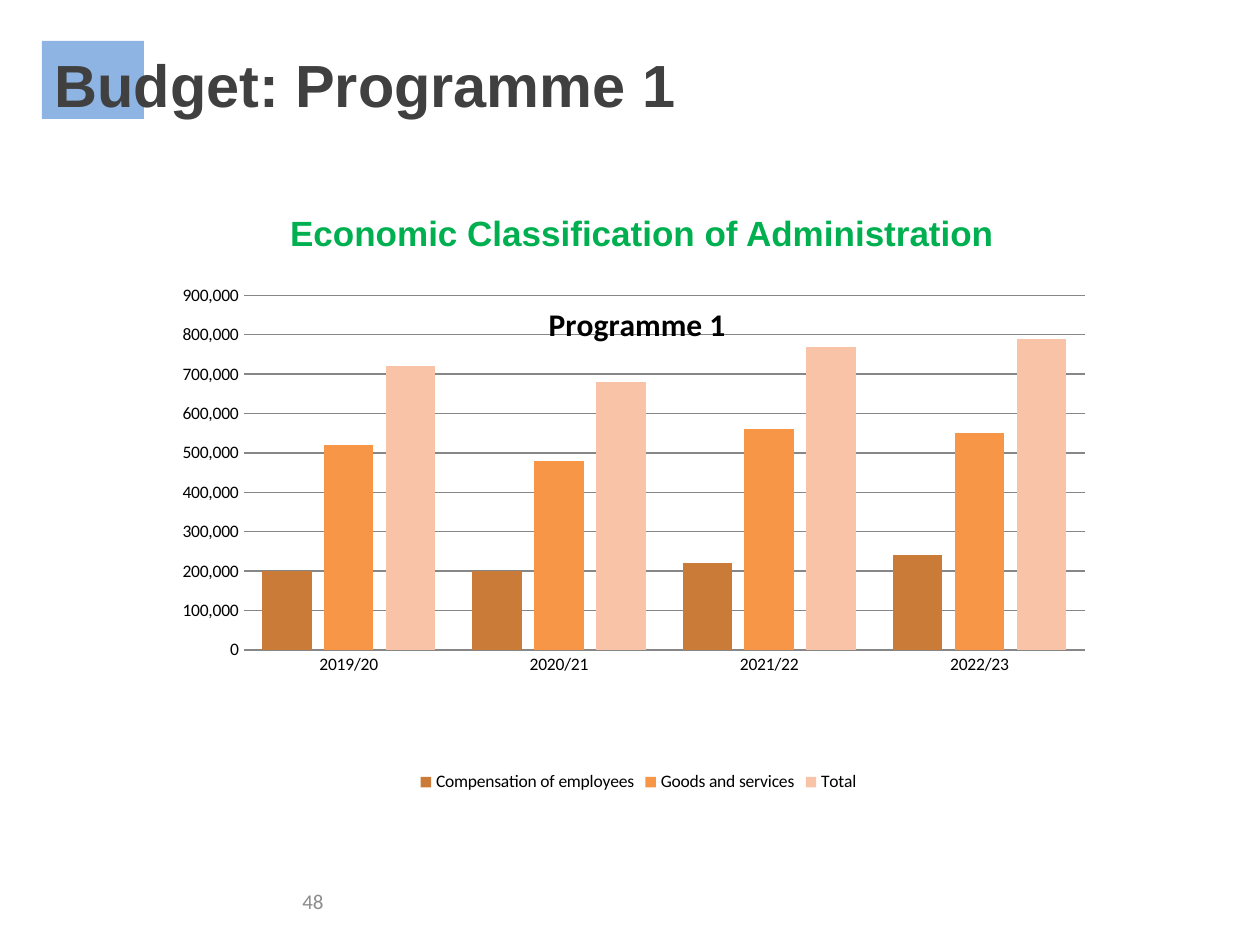
import pptx
import pptx.chart.data
import pptx.dml.color
import pptx.enum.chart
import pptx.enum.shapes
import pptx.enum.text
import pptx.oxml
import pptx.oxml.ns
import pptx.util

PX = pptx.util.Inches(1) / 126
ALIGN = pptx.enum.text.PP_ALIGN
ANCHOR = pptx.enum.text.MSO_ANCHOR

YEARS = ["2019/20", "2020/21", "2021/22", "2022/23"]
SPENDING = [
    ("Compensation of employees", "CB7B38", [200000, 200000, 220000, 240000]),
    ("Goods and services", "F79646", [520000, 480000, 560000, 550000]),
    ("Total ", "F9C3A8", [720000, 680000, 770000, 790000]),
]


def emu(*lengths):
    return [round(length * PX) for length in lengths]


def rgb(code):
    return pptx.dml.color.RGBColor.from_string(code)


def style_font(font, size, color, name, bold=False):
    font.size = pptx.util.Pt(size)
    font.color.rgb = rgb(color)
    font.name = name
    font.bold = bold


def write(frame, text, size, color, name="Arial", bold=False,
          align=ALIGN.LEFT, anchor=ANCHOR.TOP):
    frame.word_wrap = True
    frame.auto_size = pptx.enum.text.MSO_AUTO_SIZE.NONE
    frame.vertical_anchor = anchor
    paragraph = frame.paragraphs[0]
    paragraph.alignment = align
    run = paragraph.add_run()
    run.text = text
    style_font(run.font, size, color, name, bold)


def place_in_chart(element, position, x, y, w=None, h=None):
    """Give a chart part a manual layout, in fractions of the chart."""
    inner = '<c:layoutTarget val="inner"/>' if w else ""
    modes = '<c:xMode val="edge"/><c:yMode val="edge"/>'
    sizes = [("x", x), ("y", y), ("w", w), ("h", h)]
    values = "".join(f'<c:{key} val="{value}"/>' for key, value in sizes if value)
    for old in element.findall(pptx.oxml.ns.qn("c:layout")):
        element.remove(old)
    element.insert(position, pptx.oxml.parse_xml(
        f'<c:layout {pptx.oxml.ns.nsdecls("c")}><c:manualLayout>'
        f"{inner}{modes}{values}</c:manualLayout></c:layout>"))


class Deck:
    """Holds the presentation, its current slide and the shared style."""

    line_color = "878787"
    chart_font = "Calibri"

    def __init__(self):
        self.presentation = pptx.Presentation()
        self.presentation.slide_width, self.presentation.slide_height = emu(1260, 945)
        self.slide = self.presentation.slides.add_slide(
            self.presentation.slide_layouts[5])

    def block(self, x, y, w, h, color):
        """Add a plain rectangle behind everything else."""
        block = self.slide.shapes.add_shape(
            pptx.enum.shapes.MSO_SHAPE.RECTANGLE, *emu(x, y, w, h))
        block.shadow.inherit = False
        block.fill.solid()
        block.fill.fore_color.rgb = rgb(color)
        block.line.fill.background()
        self.slide.shapes._spTree.insert(2, block._element)

    def title(self, x, y, w, h, text, **style):
        title = self.slide.shapes.title
        title.left, title.top, title.width, title.height = emu(x, y, w, h)
        write(title.text_frame, text, **style)

    def text(self, x, y, w, h, text, **style):
        box = self.slide.shapes.add_textbox(*emu(x, y, w, h))
        write(box.text_frame, text, **style)

    def column_chart(self, x, y, w, h, heading, categories, series):
        data = pptx.chart.data.CategoryChartData(number_format="#,##0")
        data.categories = categories
        for name, _, values in series:
            data.add_series(name, values)
        chart = self.slide.shapes.add_chart(
            pptx.enum.chart.XL_CHART_TYPE.COLUMN_CLUSTERED,
            *emu(x, y, w, h), data).chart
        style_font(chart.font, 10, "000000", self.chart_font)

        plot = chart.plots[0]
        plot.gap_width, plot.overlap, plot.vary_by_categories = 75, -25, False
        for column, (_, color, _) in zip(plot.series, series):
            column.format.fill.solid()
            column.format.fill.fore_color.rgb = rgb(color)
            column.invert_if_negative = False

        self.style_axes(chart)
        self.overlay_heading(chart, heading)
        place_in_chart(chart._chartSpace.chart.plotArea, 0, 0.08, 0.024, 0.89, 0.69)
        chart.has_legend = True
        chart.legend.position = pptx.enum.chart.XL_LEGEND_POSITION.BOTTOM
        chart.legend.include_in_layout = False

    def style_axes(self, chart):
        amounts, years = chart.value_axis, chart.category_axis
        for axis in (amounts, years):
            axis.major_tick_mark = pptx.enum.chart.XL_TICK_MARK.NONE
        amounts.minimum_scale, amounts.maximum_scale = 0, 900000
        amounts.major_unit = 100000
        amounts.tick_labels.number_format = "#,##0"
        amounts.tick_labels.number_format_is_linked = False
        amounts.format.line.fill.background()
        for line in (amounts.major_gridlines.format.line, years.format.line):
            line.color.rgb = rgb(self.line_color)
            line.width = pptx.util.Pt(0.75)

    def overlay_heading(self, chart, heading):
        """Put the chart title over the plot area."""
        heading_run = chart.chart_title.text_frame.paragraphs[0].add_run()
        heading_run.text = heading
        style_font(heading_run.font, 18, "000000", self.chart_font, bold=True)
        title = chart.chart_title._element
        place_in_chart(title, 1, 0.397, 0.026)
        for overlay in title.findall(pptx.oxml.ns.qn("c:overlay")):
            overlay.set("val", "1")


def main():
    deck = Deck()
    deck.block(42, 41, 102, 78, "8EB4E3")
    deck.column_chart(168, 283, 945, 514, "Programme 1 ", YEARS, SPENDING)
    deck.title(42, 42, 903, 84, "Budget: Programme 1",
               size=34, color="404040", bold=True)
    deck.text(248, 205, 798, 55, "Economic Classification of Administration ",
              size=20, color="00B050", bold=True, align=ALIGN.CENTER)
    deck.text(42, 876, 294, 50, "48", size=12, color="8C8C8C", name="Calibri",
              align=ALIGN.RIGHT, anchor=ANCHOR.MIDDLE)
    deck.presentation.save("out.pptx")


if __name__ == "__main__":
    main()
